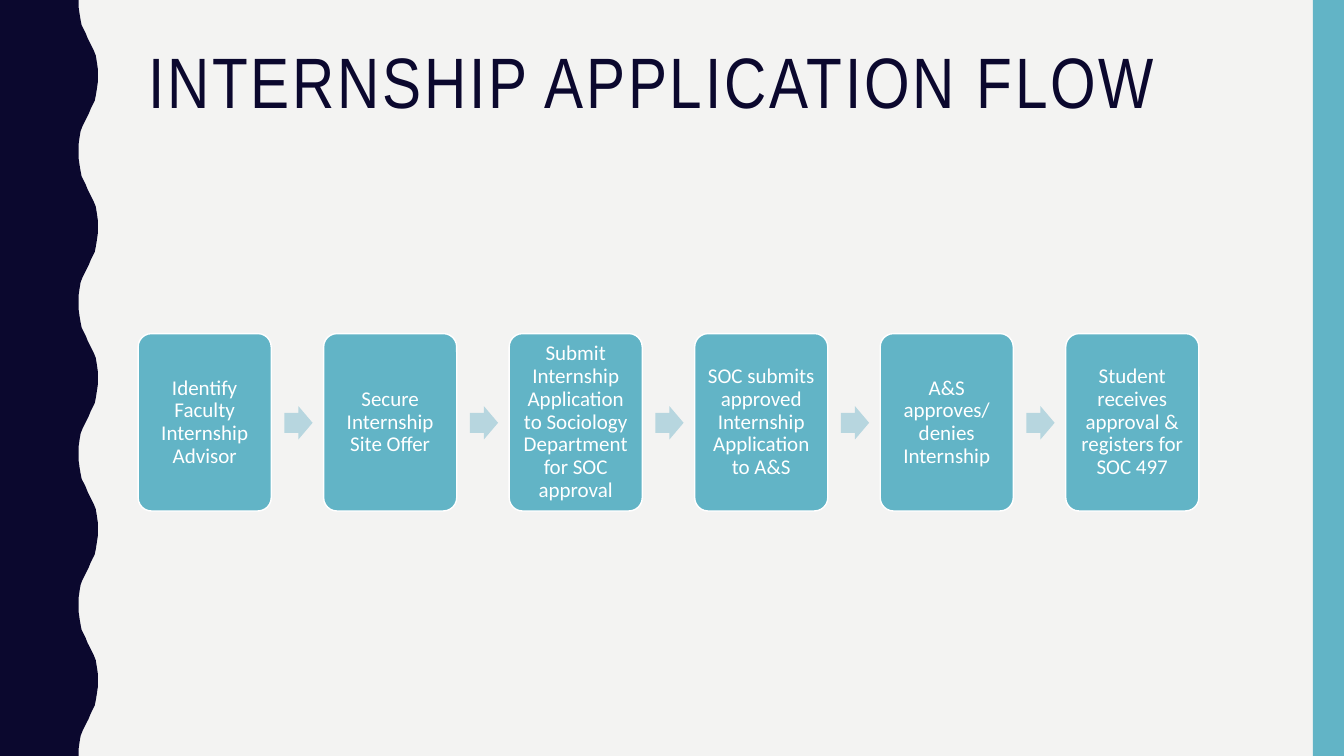
import pptx
import pptx.dml.color
import pptx.enum.shapes
import pptx.enum.text
import pptx.util

Inches = pptx.util.Inches
Pt = pptx.util.Pt
RGBColor = pptx.dml.color.RGBColor
MSO_SHAPE = pptx.enum.shapes.MSO_SHAPE

NAVY = RGBColor(0x0B, 0x08, 0x2E)
TEAL = RGBColor(0x62, 0xB4, 0xC6)
PALE_TEAL = RGBColor(0xB7, 0xD6, 0xDF)
WHITE = RGBColor(0xFF, 0xFF, 0xFF)
BACKGROUND = RGBColor(0xF3, 0xF3, 0xF2)

STEPS = [
    "Identify Faculty Internship Advisor",
    "Secure Internship Site Offer",
    "Submit Internship Application to Sociology Department for SOC approval",
    "SOC submits approved Internship Application to A&S",
    "A&S approves/ denies Internship",
    "Student receives approval & registers for SOC 497",
]
STEP_LEFT, STEP_TOP, STEP_PITCH = 1.37, 3.31, 1.84
STEP_WIDTH, STEP_HEIGHT = 1.32, 1.76
ARROW_OFFSET, ARROW_TOP = 1.45, 4.03

WAVE_PERIOD, WAVE_COUNT = 1.5, 5
WAVE_INNER, WAVE_OUTER = 0.78, 0.97
WAVE_RISE = [
    (0.78, 0), (0.78, 0.07), (0.79, 0.14), (0.8, 0.2), (0.81, 0.25), (0.83, 0.29),
    (0.85, 0.33), (0.87, 0.38), (0.89, 0.42), (0.91, 0.46), (0.93, 0.5),
    (0.95, 0.55), (0.96, 0.61), (0.97, 0.68),
]


def paint(shape, color):
    shape.shadow.inherit = False
    shape.fill.solid()
    shape.fill.fore_color.rgb = color
    shape.line.fill.background()


def write(shape, text, frame_format, paragraph_format, font_format, color):
    frame = shape.text_frame
    for name, value in frame_format.items():
        setattr(frame, name, value)
    paragraph = frame.paragraphs[0]
    for name, value in paragraph_format.items():
        setattr(paragraph, name, value)
    run = paragraph.add_run()
    run.text = text
    for name, value in font_format.items():
        setattr(run.font, name, value)
    run.font.color.rgb = color
    return run


presentation = pptx.Presentation()
presentation.slide_width = Inches(13.33)
presentation.slide_height = Inches(7.5)
slide = presentation.slides.add_slide(presentation.slide_layouts[6])
slide.background.fill.solid()
slide.background.fill.fore_color.rgb = BACKGROUND

wave_fall = [(WAVE_INNER + WAVE_OUTER - x, y + WAVE_PERIOD / 2) for x, y in WAVE_RISE]
wave_points = [
    (x, y + wave * WAVE_PERIOD)
    for wave in range(WAVE_COUNT)
    for x, y in WAVE_RISE + wave_fall
]
outline = wave_points + [(WAVE_INNER, 7.5), (0, 7.5)]
builder = slide.shapes.build_freeform(0, 0)
builder.add_line_segments([(Inches(x), Inches(y)) for x, y in outline], close=True)
paint(builder.convert_to_shape(), NAVY)

side_bar = slide.shapes.add_shape(
    MSO_SHAPE.RECTANGLE, Inches(13.02), Inches(0), Inches(0.31), Inches(7.5)
)
paint(side_bar, TEAL)

title = slide.shapes.add_textbox(Inches(1.37), Inches(0.42), Inches(11.13), Inches(1.08))
title_run = write(
    title,
    "INTERNSHIP APPLICATION FLOW",
    {"word_wrap": True, "vertical_anchor": pptx.enum.text.MSO_ANCHOR.TOP},
    {"line_spacing": 0.9},
    {"name": "Arial Narrow", "size": Pt(51)},
    NAVY,
)
title_run.font._element.set("spc", "200")

step_frame = {"word_wrap": True, "vertical_anchor": pptx.enum.text.MSO_ANCHOR.MIDDLE}
for side in ("left", "top", "right", "bottom"):
    step_frame["margin_" + side] = Inches(0.06)

for index, step_text in enumerate(STEPS):
    left = STEP_LEFT + index * STEP_PITCH
    step = slide.shapes.add_shape(
        MSO_SHAPE.ROUNDED_RECTANGLE,
        Inches(left), Inches(STEP_TOP), Inches(STEP_WIDTH), Inches(STEP_HEIGHT),
    )
    step.adjustments[0] = 0.1
    paint(step, TEAL)
    step.line.color.rgb = WHITE
    step.line.width = Pt(1)
    write(
        step,
        step_text,
        step_frame,
        {"alignment": pptx.enum.text.PP_ALIGN.CENTER, "line_spacing": 0.9},
        {"name": "Calibri", "size": Pt(15)},
        WHITE,
    )
    if index < len(STEPS) - 1:
        arrow = slide.shapes.add_shape(
            MSO_SHAPE.RIGHT_ARROW,
            Inches(left + ARROW_OFFSET), Inches(ARROW_TOP), Inches(0.28), Inches(0.33),
        )
        arrow.adjustments[0] = 0.6
        arrow.adjustments[1] = 0.5
        paint(arrow, PALE_TEAL)

presentation.save("out.pptx")
